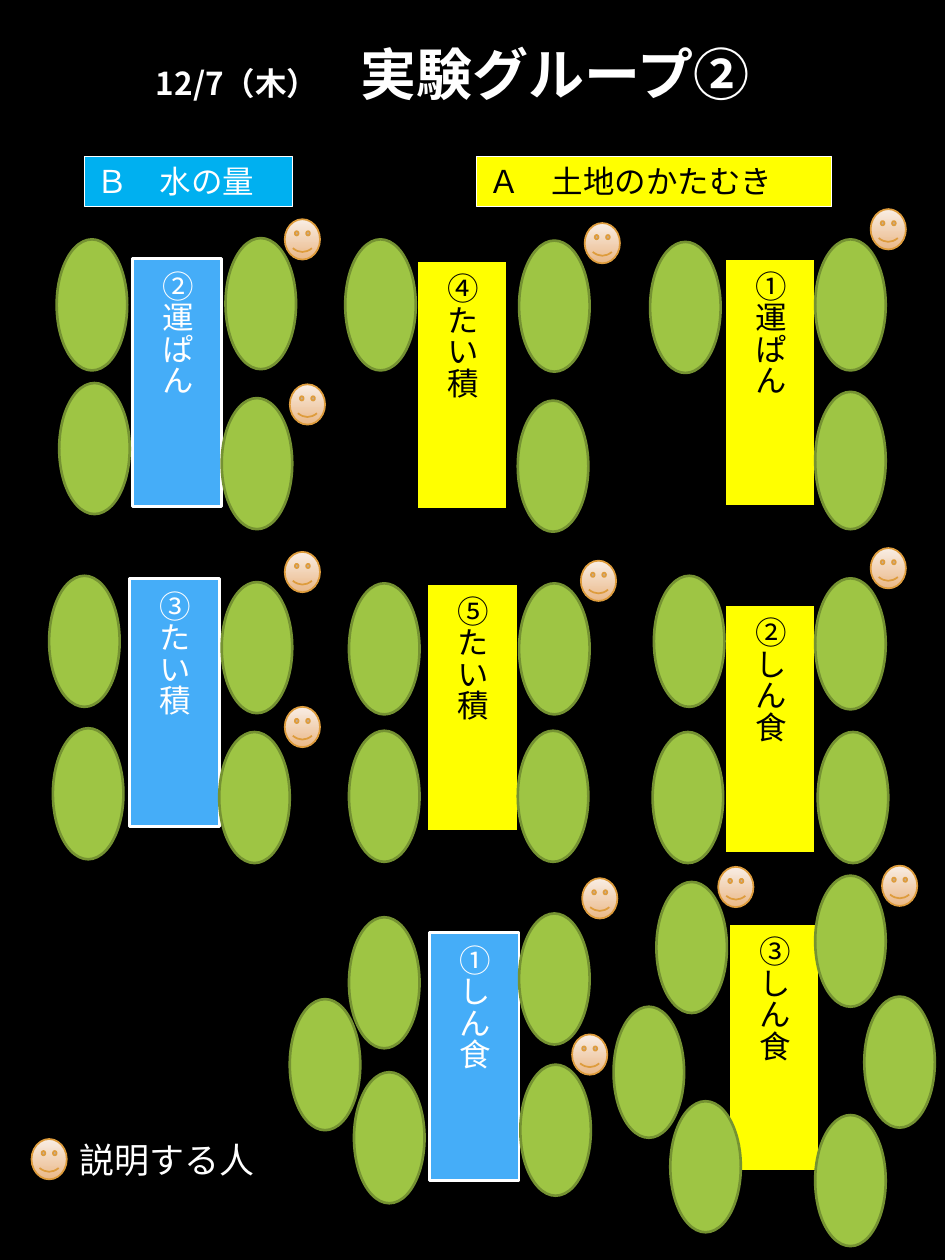
from lxml import etree
from pptx import Presentation
from pptx.dml.color import RGBColor
from pptx.enum import shapes, text
from pptx.oxml import ns
from pptx.util import Inches, Pt

FONT = "Noto Sans CJK JP"
BLACK = RGBColor(0x00, 0x00, 0x00)
WHITE = RGBColor(0xFF, 0xFF, 0xFF)
YELLOW = RGBColor(0xFF, 0xFF, 0x00)
CYAN = RGBColor(0x00, 0xB0, 0xF0)
BLUE = RGBColor(0x45, 0xAD, 0xF8)
GREEN = RGBColor(0x9E, 0xC5, 0x44)
DARK_GREEN = RGBColor(0x75, 0x92, 0x32)
PALE_SKIN = RGBColor(0xF9, 0xEE, 0xE5)
SKIN = RGBColor(0xEA, 0xB8, 0x87)
ORANGE = RGBColor(0xDE, 0x9C, 0x3C)

YELLOW_DESK = (YELLOW, BLACK, BLACK)  # fill, line, text
BLUE_DESK = (BLUE, WHITE, WHITE)
DESK_HEIGHT = 1.97
SEAT_WIDTH, SEAT_HEIGHT = 0.56, 1.04
FACE_WIDTH, FACE_HEIGHT = 0.28, 0.32

# Each group: label, style, desk (left, top, width), then seats and
# presenters' faces as offsets from the desk's top left corner.
GROUPS = [
    ("①運ぱん", YELLOW_DESK, (5.75, 2.05, 0.72),
     [(-0.59, -0.13), (0.72, -0.15), (0.72, 1.06, 1.09)],
     [(1.16, -0.39)]),
    ("②しん食", YELLOW_DESK, (5.75, 4.8, 0.72),
     [(-0.56, -0.23), (-0.57, 1.01), (0.72, -0.21), (0.74, 1.01)],
     [(1.16, -0.45)]),
    ("③しん食", YELLOW_DESK, (5.78, 7.33, 0.72),
     [(-0.57, -0.33), (-0.91, 0.66), (-0.46, 1.41),
      (0.69, -0.38), (1.08, 0.58), (0.69, 1.52)],
     [(-0.08, -0.45), (1.22, -0.46)]),
    ("④たい積", YELLOW_DESK, (3.31, 2.07, 0.72),
     [(-0.57, -0.17), (0.81, -0.16), (0.8, 1.11)],
     [(1.33, -0.3)]),
    ("⑤たい積", YELLOW_DESK, (3.39, 4.63, 0.72),
     [(-0.62, 0), (-0.62, 1.17), (0.73, 0), (0.72, 1.17)],
     [(1.22, -0.18)]),
    ("①しん食", BLUE_DESK, (3.41, 7.4, 0.71),
     [(-0.64, -0.12), (-1.11, 0.53), (-0.6, 1.11), (0.71, -0.15), (0.72, 1.05)],
     [(1.21, -0.43), (1.13, 0.81)]),
    ("②運ぱん", BLUE_DESK, (1.05, 2.05, 0.71),
     [(-0.6, -0.15), (-0.58, 0.99), (0.74, -0.16), (0.71, 1.11)],
     [(1.21, -0.31), (1.25, 1)]),
    ("③たい積", BLUE_DESK, (1.03, 4.59, 0.71),
     [(-0.64, -0.02), (-0.61, 1.19), (0.73, 0.03), (0.71, 1.22)],
     [(1.23, -0.21), (1.23, 1.02)]),
]


def format_span(span, size, color, bold=None):
    span.font.name = FONT
    span.font.size = Pt(size)
    span.font.bold = bold
    span.font.color.rgb = color
    east_asian = etree.SubElement(span.font._element, ns.qn("a:ea"))
    east_asian.set("typeface", FONT)


def write(frame, words, size, color):
    frame.text = words
    para = frame.paragraphs[0]
    para.alignment = text.PP_ALIGN.LEFT
    format_span(para.runs[0], size, color)
    return para


def add_shape(parent, kind, box, fill, line, line_width):
    shape = parent.shapes.add_shape(kind, *map(Inches, box))
    shape.shadow.inherit = False
    if fill is not None:
        shape.fill.solid()
        shape.fill.fore_color.rgb = fill
    shape.line.color.rgb = line
    shape.line.width = Pt(line_width)
    return shape


def add_face(parent, left, top):
    face = add_shape(parent, shapes.MSO_SHAPE.SMILEY_FACE,
                     (left, top, FACE_WIDTH, FACE_HEIGHT), None, ORANGE, 1)
    face.fill.gradient()
    face.fill.gradient_angle = 270  # counter-clockwise: top to bottom
    for stop, color, position in zip(face.fill.gradient_stops, (PALE_SKIN, SKIN), (0, 1)):
        stop.color.rgb = color
        stop.position = position


def add_title(page, box):
    title = page.shapes.title
    title.left, title.top, title.width, title.height = map(Inches, box)
    title.text_frame.vertical_anchor = text.MSO_ANCHOR.MIDDLE
    para = title.text_frame.paragraphs[0]
    para.alignment = text.PP_ALIGN.CENTER
    para.line_spacing = 0.9
    for words, size in (("12/7（木）", 18), ("\u3000", 24), ("実験グループ②", 32), ("\u3000", 24)):
        span = para.add_run()
        span.text = words
        format_span(span, size, WHITE, bold=True)


def add_heading(page, box, words, fill, color):
    heading = add_shape(page, shapes.MSO_SHAPE.RECTANGLE, box, fill, WHITE, 0.75)
    heading.text_frame.vertical_anchor = text.MSO_ANCHOR.TOP
    para = write(heading.text_frame, words, 18, color)
    properties = para._p.get_or_add_pPr()
    properties.set("marL", str(Inches(0.12)))
    properties.set("indent", str(-Inches(0.12)))


def add_group(page, label, style, desk_box, seats, faces):
    left, top, width = desk_box
    fill, line, color = style
    # Desk with vertical label
    desk = add_shape(page, shapes.MSO_SHAPE.FLOWCHART_PROCESS,
                     (left, top, width, DESK_HEIGHT), fill, line, 1.5)
    frame = desk.text_frame
    frame.vertical_anchor = text.MSO_ANCHOR.MIDDLE
    frame._txBody.bodyPr.set("vert", "eaVert")
    write(frame, label, 18, color)
    # Seats, a few of them with their own height
    for across, down, *height in seats:
        box = (left + across, top + down, SEAT_WIDTH, *(height or [SEAT_HEIGHT]))
        add_shape(page, shapes.MSO_SHAPE.FLOWCHART_CONNECTOR, box, GREEN, DARK_GREEN, 1.5)
    # Presenters
    for across, down in faces:
        add_face(page, left + across, top + down)


def add_legend(page, box):
    left, top, width, height = box
    legend = page.shapes.add_group_shape()
    add_face(legend, left, top + 0.05)
    caption = legend.shapes.add_textbox(Inches(left + FACE_WIDTH), Inches(top),
                                        Inches(width - FACE_WIDTH), Inches(height))
    caption.text_frame.word_wrap = True
    write(caption.text_frame, "説明する人", 20, WHITE)


def main():
    deck = Presentation()
    deck.slide_width, deck.slide_height = Inches(7.5), Inches(10)
    page = deck.slides.add_slide(deck.slide_layouts[5])
    page.background.fill.solid()
    page.background.fill.fore_color.rgb = BLACK

    add_title(page, (0.79, 0.26, 5.94, 0.71))
    add_heading(page, (3.78, 1.24, 2.82, 0.4), "Ａ\u3000土地のかたむき", YELLOW, BLACK)
    add_heading(page, (0.67, 1.24, 1.65, 0.4), "Ｂ\u3000水の量", CYAN, WHITE)
    for group in GROUPS:
        add_group(page, *group)
    add_legend(page, (0.25, 8.99, 2.1, 0.44))
    deck.save("out.pptx")


if __name__ == "__main__":
    main()
